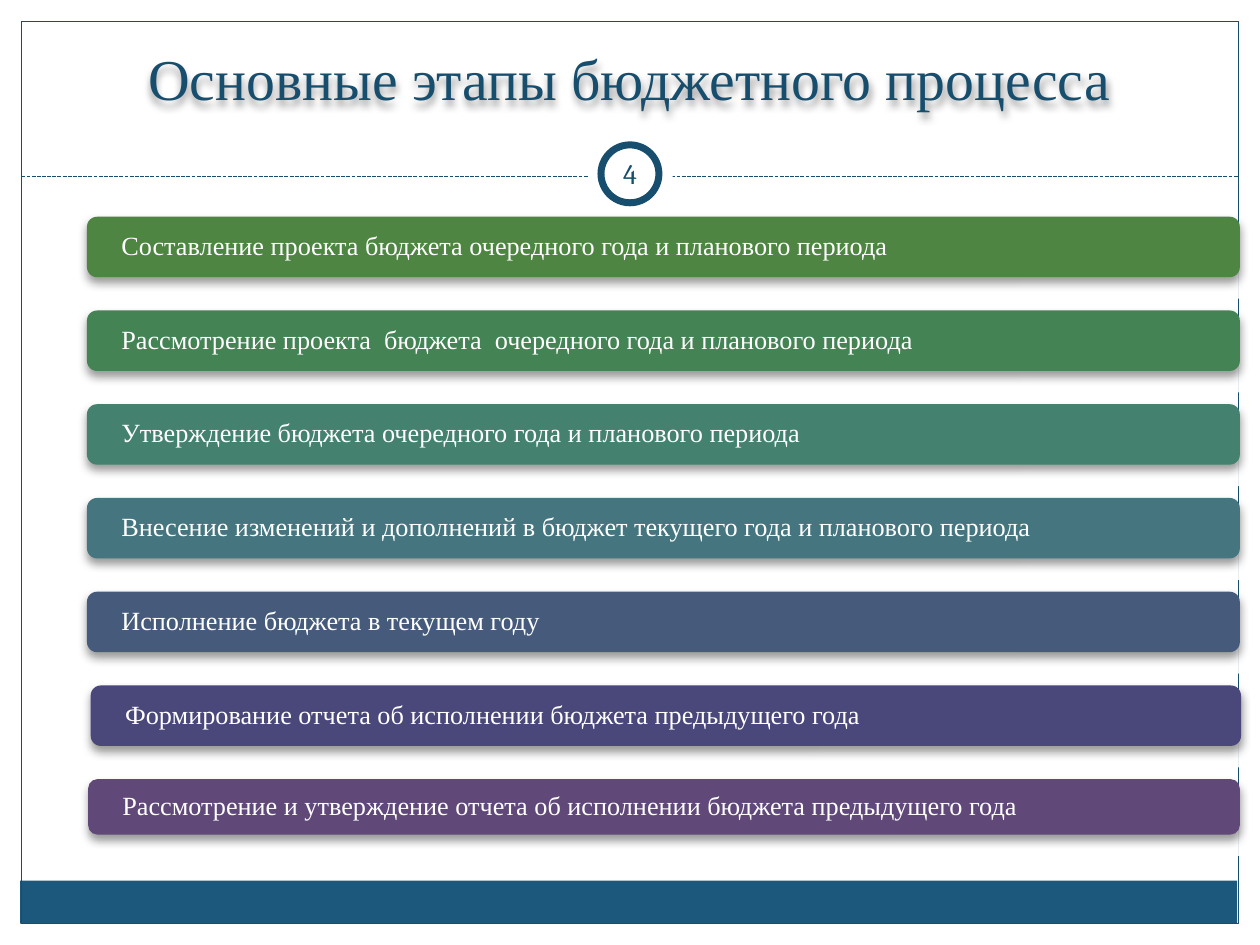
"""Build the slide listing the main stages of the budget process."""
from dataclasses import dataclass

from lxml.etree import SubElement
from pptx import Presentation
from pptx.dml.color import RGBColor
from pptx.enum.dml import MSO_LINE
from pptx.enum.shapes import MSO_CONNECTOR, MSO_SHAPE
from pptx.enum.text import MSO_ANCHOR, MSO_AUTO_SIZE, PP_ALIGN
from pptx.oxml.ns import qn
from pptx.shapes.autoshape import Shape
from pptx.slide import Slide
from pptx.util import Inches, Pt

NAVY = "184E6D"
WHITE = "FFFFFF"
SERIF = "Times New Roman"
FIRST_TOP = 1.72
STAGE_PITCH = 0.744
BACKING_LEFT = 0.23
BACKING_WIDTH = 9.61
BACKING_HEIGHT = 0.41


@dataclass(frozen=True)
class Stage:
    """One stage of the process and its bar."""
    wording: str
    color: str
    left: float = 0.69
    width: float = 9.15
    height: float = 0.48
    backing_drop: float = 0.24


STAGES = [
    Stage("Составление проекта бюджета очередного года и планового периода", "4E8542"),
    Stage("Рассмотрение проекта  бюджета  очередного года и планового периода", "438354"),
    Stage("Утверждение бюджета очередного года и планового периода", "44816F"),
    Stage("Внесение изменений и дополнений в бюджет текущего года и планового периода", "45757E"),
    Stage("Исполнение бюджета в текущем году", "465B7C"),
    Stage("Формирование отчета об исполнении бюджета предыдущего года", "4A477A",
          left=0.72, width=9.13),
    Stage("Рассмотрение и утверждение отчета об исполнении бюджета предыдущего года",
          "604878", left=0.7, width=9.14, height=0.44, backing_drop=0.2),
]


def rgb(value: str) -> RGBColor:
    """Turn a hex string into a colour."""
    return RGBColor.from_string(value)


def add_panel(slide: Slide, kind: MSO_SHAPE, left: float, top: float, width: float,
              height: float, fill: str | None = None, line: str | None = None,
              weight: float = 0.75) -> Shape:
    """Add a flat preset shape."""
    panel = slide.shapes.add_shape(kind, Inches(left), Inches(top), Inches(width), Inches(height))
    panel.shadow.inherit = False
    if fill:
        panel.fill.solid()
        panel.fill.fore_color.rgb = rgb(fill)
    else:
        panel.fill.background()
    if line:
        panel.line.color.rgb = rgb(line)
        panel.line.width = Pt(weight)
    else:
        panel.line.fill.background()
    return panel


def add_alpha(color_node, percent: int) -> None:
    """Set the opacity of a colour element."""
    SubElement(color_node, qn("a:alpha"), val=str(percent * 1000))


def cast_shadow(shape: Shape, opacity: int, blur: float, distance: float) -> None:
    """Give a shape a black shadow falling downwards."""
    shape.shadow.inherit = False
    effects = shape._element.spPr.find(qn("a:effectLst"))
    shadow = SubElement(effects, qn("a:outerShdw"), blurRad=str(Pt(blur)), dist=str(Pt(distance)),
                        dir="5400000", rotWithShape="0")
    add_alpha(SubElement(shadow, qn("a:srgbClr"), val="000000"), opacity)


def write(shape: Shape, wording: str, size: float, color: str, font: str = SERIF,
          align: PP_ALIGN = PP_ALIGN.CENTER, anchor: MSO_ANCHOR = MSO_ANCHOR.MIDDLE,
          side_inset: float = 0) -> None:
    """Write one formatted paragraph into a shape."""
    frame = shape.text_frame
    frame.text = wording
    frame.word_wrap = True
    frame.auto_size = MSO_AUTO_SIZE.NONE
    frame.vertical_anchor = anchor
    frame.margin_left = frame.margin_right = Inches(side_inset)
    frame.margin_top = frame.margin_bottom = 0
    paragraph = frame.paragraphs[0]
    paragraph.alignment = align
    paragraph.font.size = Pt(size)
    paragraph.font.name = font
    paragraph.font.color.rgb = rgb(color)


def add_frame(slide: Slide) -> None:
    """Draw the footer band, border, divider and page number ring."""
    add_panel(slide, MSO_SHAPE.RECTANGLE, 0.16, 6.99, 9.66, 0.34, "1B587C")
    border = add_panel(slide, MSO_SHAPE.RECTANGLE, 0.17, 0.17, 9.66, 7.16, line=NAVY)
    divider = slide.shapes.add_connector(MSO_CONNECTOR.STRAIGHT, Inches(0.17), Inches(1.4),
                                         Inches(9.83), Inches(1.4))
    divider.line.color.rgb = rgb(NAVY)
    divider.line.width = border.line.width
    divider.line.dash_style = MSO_LINE.SQUARE_DOT
    SubElement(divider._element.spPr, qn("a:effectLst"))
    add_panel(slide, MSO_SHAPE.OVAL, 4.67, 1.05, 0.67, 0.67, WHITE)
    ring = add_panel(slide, MSO_SHAPE.OVAL, 4.77, 1.15, 0.46, 0.46, WHITE, NAVY, 4)
    write(ring, "4", 16, NAVY, "Cambria")


def add_title(slide: Slide) -> None:
    """Fill and place the title placeholder."""
    title = slide.shapes.title
    title.left, title.top = Inches(0.33), Inches(0.25)
    title.width, title.height = Inches(9.33), Inches(0.69)
    write(title, "Основные этапы бюджетного процесса", 33, NAVY,
          anchor=MSO_ANCHOR.BOTTOM, side_inset=0.1)
    title.text_frame.margin_bottom = Inches(0.05)
    cast_shadow(title, 40, 4, 3)


def add_stage(slide: Slide, stage: Stage, top: float) -> None:
    """Draw a stage bar over its translucent backing."""
    backing = add_panel(slide, MSO_SHAPE.RECTANGLE, BACKING_LEFT, top + stage.backing_drop,
                        BACKING_WIDTH, BACKING_HEIGHT, WHITE)
    add_alpha(backing._element.spPr.find(qn("a:solidFill"))[0], 90)
    bar = add_panel(slide, MSO_SHAPE.ROUNDED_RECTANGLE, stage.left, top,
                    stage.width, stage.height, stage.color)
    cast_shadow(bar, 40, 5.2, 3)
    write(bar, stage.wording, 15, WHITE, align=PP_ALIGN.LEFT, side_inset=0.25)
    bar.text_frame.paragraphs[0].line_spacing = 0.9


def main() -> None:
    """Assemble and save the presentation."""
    deck = Presentation()
    deck.slide_width, deck.slide_height = Inches(10), Inches(7.5)
    slide = deck.slides.add_slide(deck.slide_layouts[5])
    add_frame(slide)
    add_title(slide)
    for index, stage in enumerate(STAGES):
        add_stage(slide, stage, FIRST_TOP + index * STAGE_PITCH)
    deck.save("out.pptx")


if __name__ == "__main__":
    main()
